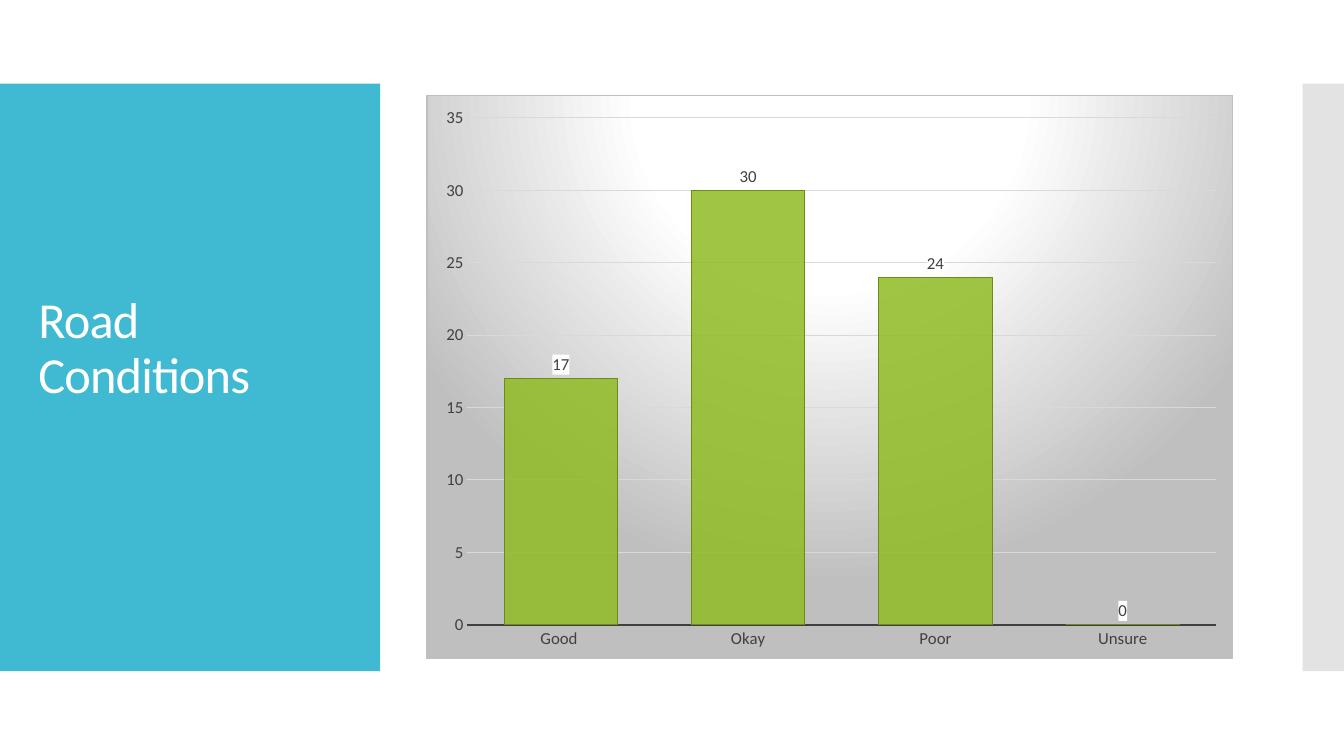
from lxml import etree
from pptx import Presentation
from pptx.chart.data import CategoryChartData
from pptx.dml.color import RGBColor
from pptx.enum.chart import XL_CHART_TYPE as ChartType, XL_LABEL_POSITION as LabelPos
from pptx.enum.chart import XL_TICK_MARK as TickMark
from pptx.enum.shapes import MSO_SHAPE as Shape
from pptx.enum.text import MSO_ANCHOR as Anchor, MSO_AUTO_SIZE as AutoSize, PP_ALIGN as Align
from pptx.oxml import parse_xml
from pptx.oxml.ns import nsdecls, qn
from pptx.util import Inches, Pt

FONT = "Calibri"
WHITE = RGBColor(0xFF, 0xFF, 0xFF)
TEAL = RGBColor(0x40, 0xBA, 0xD2)
PALE_GRAY = RGBColor(0xC8, 0xC8, 0xC8)
BORDER_GRAY = RGBColor(0xBF, 0xBF, 0xBF)
GRID_GRAY = RGBColor(0xD9, 0xD9, 0xD9)
DARK_GRAY = RGBColor(0x40, 0x40, 0x40)
GREEN = RGBColor(0x90, 0xBB, 0x23)
DARK_GREEN = RGBColor(0x6C, 0x8C, 0x1A)

RATINGS = ("Good ", "Okay", "Poor", "Unsure")
VOTES = (17, 30, 24, 0)


def set_alpha(element, percent):
    """Make the first solid colour inside the element partly transparent."""
    color = next(element.iter(qn("a:srgbClr")))
    etree.SubElement(color, qn("a:alpha"), val=str(percent * 1000))


def add_band(s, left, width, color, alpha=100):
    band = s.shapes.add_shape(Shape.RECTANGLE, Inches(left), Inches(0.83),
                              Inches(width), Inches(5.83))
    band.shadow.inherit = False
    band.fill.solid()
    band.fill.fore_color.rgb = color
    band.line.fill.background()
    if alpha < 100:
        set_alpha(band._element.spPr, alpha)


def format_font(font, size, color):
    font.name = FONT
    font.size = Pt(size)
    font.color.rgb = color


def format_title(s, text):
    title = s.shapes.title
    s.shapes._spTree.append(title._element)  # in front of the teal band
    title.left, title.top = Inches(0.28), Inches(1.23)
    title.width, title.height = Inches(3.22), Inches(5.03)
    tf = title.text_frame
    tf.text = text
    tf.word_wrap = True
    tf.auto_size = AutoSize.NONE
    tf.vertical_anchor = Anchor.MIDDLE
    tf.margin_bottom = Inches(0.6)
    p = tf.paragraphs[0]
    p.alignment = Align.LEFT
    p.line_spacing = 0.9
    r = p.runs[0]
    format_font(r.font, 36, WHITE)
    r.font._element.set("spc", "-60")


def format_axis(axis):
    axis.major_tick_mark = axis.minor_tick_mark = TickMark.NONE
    format_font(axis.tick_labels.font, 12, DARK_GRAY)


def format_line(line, color, width):
    line.color.rgb = color
    line.width = Pt(width)


def fill_chart_area(chart):
    """Radial gradient and thin border behind the whole chart."""
    stops = "".join(f'<a:gs pos="{pos * 1000}"><a:srgbClr val="{color}"/></a:gs>'
                    for pos, color in ((0, WHITE), (39, WHITE), (100, BORDER_GRAY)))
    chart._chartSpace.find(qn("c:chart")).addnext(parse_xml(
        f'<c:spPr {nsdecls("c", "a")}><a:gradFill><a:gsLst>{stops}</a:gsLst>'
        '<a:path path="circle"><a:fillToRect l="50000" t="-80000" r="50000" b="180000"/>'
        f'</a:path></a:gradFill><a:ln w="{Pt(0.75)}"><a:solidFill>'
        f'<a:srgbClr val="{BORDER_GRAY}"/></a:solidFill></a:ln></c:spPr>'))


def place_plot(chart, x, y, w, h):
    """Set the inner plot area as fractions of the chart."""
    plot_area = chart._chartSpace.find(qn("c:chart")).find(qn("c:plotArea"))
    for old in plot_area.findall(qn("c:layout")):
        plot_area.remove(old)
    sizes = "".join(f'<c:{name} val="{value}"/>'
                    for name, value in zip("xywh", (x, y, w, h)))
    plot_area.insert(0, parse_xml(
        f'<c:layout {nsdecls("c")}><c:manualLayout><c:layoutTarget val="inner"/>'
        f'<c:xMode val="edge"/><c:yMode val="edge"/>{sizes}</c:manualLayout></c:layout>'))


def format_labels(labels):
    labels.show_value = True
    labels.position = LabelPos.OUTSIDE_END
    format_font(labels.font, 12, DARK_GRAY)
    labels._element.find(qn("c:txPr")).addprevious(parse_xml(
        f'<c:spPr {nsdecls("c", "a")}><a:solidFill><a:srgbClr val="{WHITE}"/>'
        '</a:solidFill></c:spPr>'))


def add_ratings_chart(s):
    data = CategoryChartData()
    data.categories = RATINGS
    data.add_series("Series 1", VOTES)
    chart = s.shapes.add_chart(ChartType.COLUMN_CLUSTERED, Inches(4.23), Inches(0.94),
                               Inches(8), Inches(5.6), data).chart
    chart.has_legend = chart.has_title = False
    chart.font.name = FONT
    chart.font.size = Pt(10)
    fill_chart_area(chart)
    place_plot(chart, 0.05, 0.04, 0.93, 0.9)

    format_axis(chart.category_axis)
    format_line(chart.category_axis.format.line, DARK_GRAY, 1.5)
    votes_axis = chart.value_axis
    format_axis(votes_axis)
    votes_axis.format.line.fill.background()
    votes_axis.minimum_scale, votes_axis.maximum_scale = 0, 35
    votes_axis.major_unit = 5
    format_line(votes_axis.major_gridlines.format.line, GRID_GRAY, 0.75)

    plot = chart.plots[0]
    plot.gap_width = 65
    plot.vary_by_categories = False
    series = plot.series[0]
    series.format.fill.solid()
    series.format.fill.fore_color.rgb = GREEN
    set_alpha(series._element.find(qn("c:spPr")), 85)
    format_line(series.format.line, DARK_GREEN, 0.75)
    format_labels(series.data_labels)


def main():
    prs = Presentation()
    prs.slide_width, prs.slide_height = Inches(13.33), Inches(7.5)
    s = prs.slides.add_slide(prs.slide_layouts[5])
    add_band(s, 0, 3.77, TEAL)
    add_band(s, 12.92, 0.41, PALE_GRAY, alpha=50)
    format_title(s, "Road Conditions")
    add_ratings_chart(s)
    prs.save("out.pptx")


if __name__ == "__main__":
    main()
